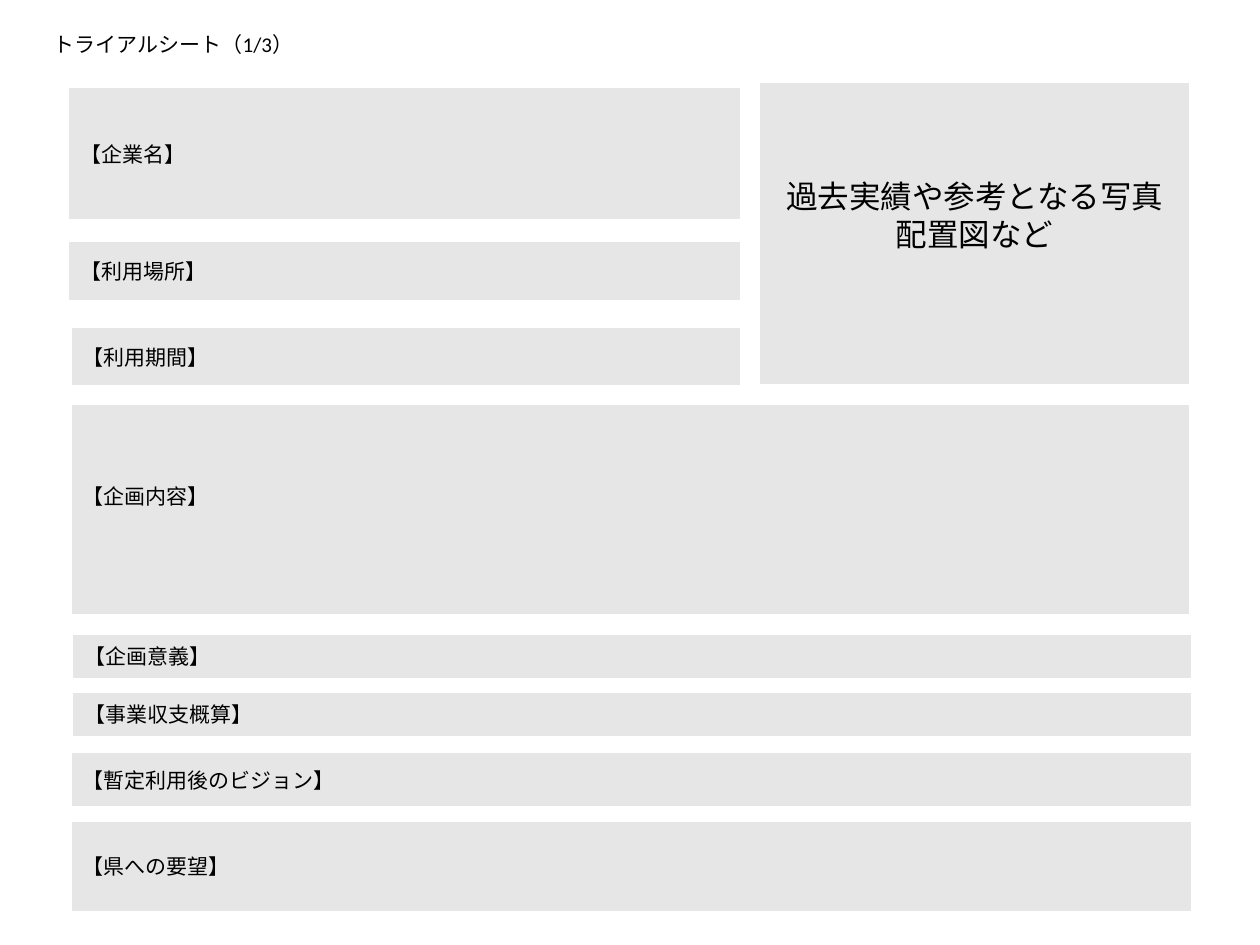
from pptx import Presentation
from pptx.dml.color import RGBColor
from pptx.enum import shapes, text
from pptx.util import Inches, Pt

FONT = "Calibri"
GREY = RGBColor(0xE7, 0xE6, 0xE6)
WHITE = RGBColor(0xFF, 0xFF, 0xFF)
BLACK = RGBColor(0x00, 0x00, 0x00)

# Label, left, top, width, height, bottom inset (a larger one lifts the label)
FIELDS = [
    ("【企業名】", 0.54, 0.69, 5.34, 1.06, 0.05),
    ("【利用場所】", 0.54, 1.91, 5.34, 0.48, 0.05),
    ("【利用期間】", 0.56, 2.59, 5.32, 0.48, 0.05),
    ("【企画内容】", 0.56, 3.2, 8.89, 1.68, 0.25),
    ("【企画意義】", 0.57, 5.03, 8.89, 0.36, 0.05),
    ("【事業収支概算】", 0.57, 5.49, 8.89, 0.36, 0.05),
    ("【暫定利用後のビジョン】", 0.56, 5.97, 8.9, 0.44, 0.05),
    ("【県への要望】", 0.56, 6.51, 8.9, 0.73, 0.05),
]


def write_text(shape, content, size=12, align=text.PP_ALIGN.LEFT,
               anchor=text.MSO_ANCHOR.MIDDLE, bottom=0.05):
    """Write one paragraph per line of content."""
    frame = shape.text_frame
    frame.word_wrap = True
    frame.vertical_anchor = anchor
    frame.margin_bottom = Inches(bottom)
    frame.text = content
    for paragraph in frame.paragraphs:
        paragraph.alignment = align
        for run in paragraph.runs:
            run.font.name = FONT
            run.font.size = Pt(size)
            run.font.color.rgb = BLACK


def add_panel(slide, content, left, top, width, height, **text_format):
    """Add a grey form field with its label."""
    shape = slide.shapes.add_shape(
        shapes.MSO_SHAPE.RECTANGLE,
        Inches(left), Inches(top), Inches(width), Inches(height))
    shape.shadow.inherit = False
    shape.fill.solid()
    shape.fill.fore_color.rgb = GREY
    shape.line.color.rgb = WHITE
    shape.line.width = Pt(1.5)
    write_text(shape, content, **text_format)


def add_heading(slide, content, left, top, width, height):
    """Add the sheet heading, which wraps within its box."""
    shape = slide.shapes.add_textbox(
        Inches(left), Inches(top), Inches(width), Inches(height))
    write_text(shape, content, anchor=text.MSO_ANCHOR.TOP)


def main():
    presentation = Presentation()
    presentation.slide_width = Inches(10)
    presentation.slide_height = Inches(7.5)
    slide = presentation.slides.add_slide(presentation.slide_layouts[6])

    # Area for photos and layout drawings
    add_panel(slide, "過去実績や参考となる写真\n配置図など", 6.02, 0.65, 3.43, 2.41,
              size=18, align=text.PP_ALIGN.CENTER, bottom=0.35)

    # Form fields
    for label, left, top, width, height, bottom in FIELDS:
        add_panel(slide, label, left, top, width, height, bottom=bottom)

    # Sheet heading
    add_heading(slide, "トライアルシート（1/3）", 0.33, 0.2, 2.14, 0.3)

    presentation.save("out.pptx")


if __name__ == "__main__":
    main()
